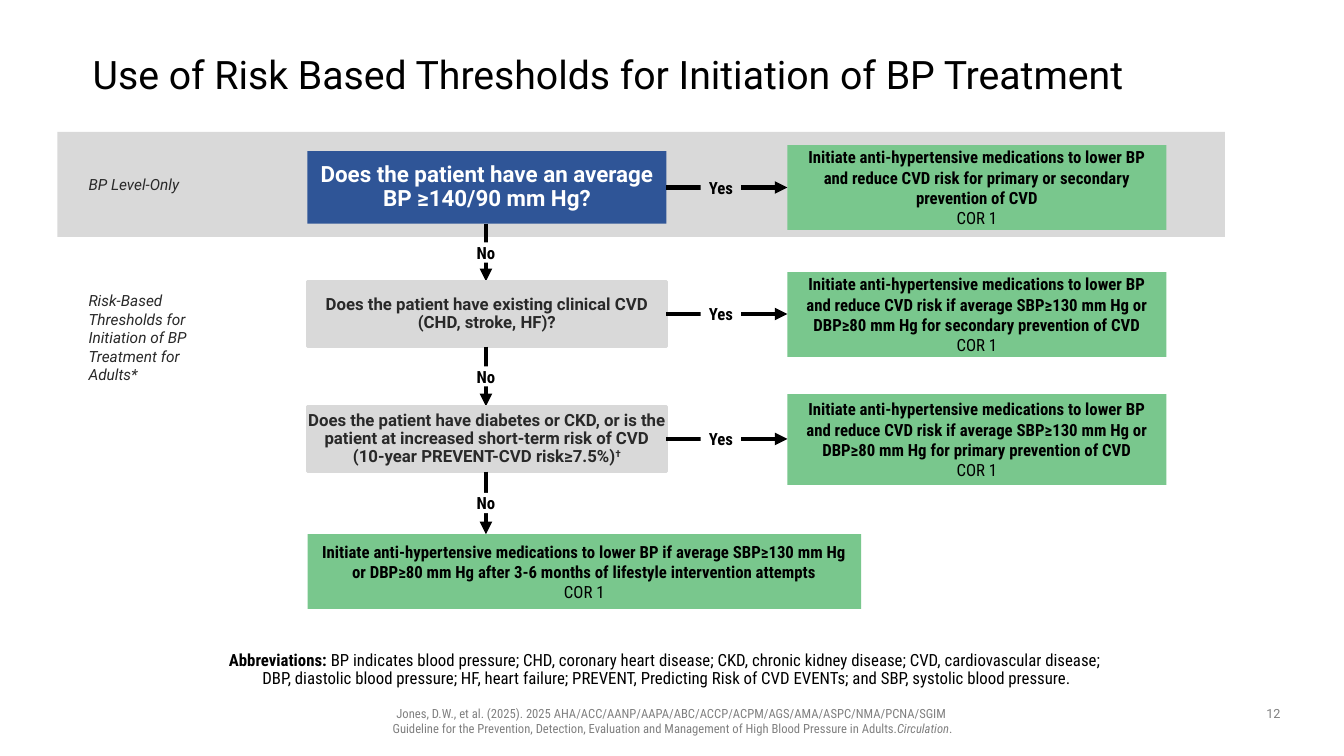
from pptx import Presentation
from pptx.dml.color import RGBColor
from pptx.enum.shapes import MSO_CONNECTOR, MSO_SHAPE
from pptx.enum.text import MSO_ANCHOR, PP_ALIGN
from pptx.oxml.ns import qn
from pptx.util import Inches, Pt
from lxml import etree

RECTANGLE = MSO_SHAPE.RECTANGLE
STRAIGHT = MSO_CONNECTOR.STRAIGHT
LEFT, CENTER = PP_ALIGN.LEFT, PP_ALIGN.CENTER
TOP, MIDDLE, BOTTOM = MSO_ANCHOR.TOP, MSO_ANCHOR.MIDDLE, MSO_ANCHOR.BOTTOM
SANS, CONDENSED = "Roboto", "Roboto Condensed"
BLACK, WHITE, INK, MUTED = "000000", "FFFFFF", "292929", "808080"
BAND, BLUE, GREEN = "D9D9D9", "2F5597", "79C78D"
NO_INSETS, INSETS = (0, 0, 0, 0), (0.1, 0.05, 0.1, 0.05)

QUESTIONS = [
    (0.06, 0.72, [("Does the patient have an average BP ≥140/90 mm Hg?", "bold")]),
    (1.35, 0.65, [("Does the patient have existing clinical CVD (CHD, stroke, HF)?", "bold")]),
    (2.59, 0.65, [("Does the patient have diabetes or CKD, or is the patient at increased "
                   "short-term risk of CVD (10-year PREVENT-CVD risk≥7.5%)", "bold"),
                  ("†", "bold superscript")]),
]
OUTCOMES = [
    (0, 0.84, "Initiate anti-hypertensive medications to lower BP and reduce CVD risk "
              "for primary or secondary prevention of CVD"),
    (1.26, 0.84, "Initiate anti-hypertensive medications to lower BP and reduce CVD risk "
                 "if average SBP≥130 mm Hg or DBP≥80 mm Hg for secondary prevention of CVD"),
    (2.47, 0.9, "Initiate anti-hypertensive medications to lower BP and reduce CVD risk "
                "if average SBP≥130 mm Hg or DBP≥80 mm Hg for primary prevention of CVD"),
]
LAST_OUTCOME = ("Initiate anti-hypertensive medications to lower BP if average SBP≥130 mm Hg "
                "or DBP≥80 mm Hg after 3-6 months of lifestyle intervention attempts")


def color(value):
    """Turn a hex string into a colour."""
    return RGBColor.from_string(value)


def write(shape, paragraphs, font, size, ink, align=CENTER, anchor=MIDDLE,
          insets=INSETS, spacing=1.0):
    """Fill a shape with paragraphs, each a list of (text, style) runs."""
    frame = shape.text_frame
    frame.word_wrap = True
    frame.vertical_anchor = anchor
    frame.margin_left, frame.margin_top, frame.margin_right, frame.margin_bottom = map(Inches, insets)
    for index, parts in enumerate(paragraphs):
        paragraph = frame.add_paragraph() if index else frame.paragraphs[0]
        paragraph.alignment = align
        paragraph.line_spacing = spacing
        for text, style in parts:
            for number, line in enumerate(text.split("\n")):
                if number:
                    paragraph.add_line_break()
                run = paragraph.add_run()
                run.text = line
                run.font.name = font
                run.font.size = Pt(size)
                run.font.color.rgb = color(ink)
                run.font.bold = "bold" in style
                run.font.italic = "italic" in style
                if "superscript" in style:
                    run.font._element.set("baseline", "30000")


def add_box(slide, box, fill, line=None):
    """Add a flat rectangle."""
    shape = slide.shapes.add_shape(RECTANGLE, *map(Inches, box))
    shape.shadow.inherit = False
    shape.fill.solid()
    shape.fill.fore_color.rgb = color(fill)
    if line:
        shape.line.color.rgb = color(line)
        shape.line.width = Pt(2)
    else:
        shape.line.fill.background()
    return shape


def add_text(slide, box, parts, font, size, ink, **layout):
    """Add a text box with one paragraph."""
    write(slide.shapes.add_textbox(*map(Inches, box)), [parts], font, size, ink, **layout)


def add_arrow(slide, start, end):
    """Add a thick black arrow between two points."""
    arrow = slide.shapes.add_connector(STRAIGHT, *map(Inches, start + end))
    arrow.line.color.rgb = color(BLACK)
    arrow.line.width = Pt(3)
    etree.SubElement(arrow.line._get_or_add_ln(), qn("a:tailEnd"), type="triangle")
    etree.SubElement(arrow._element.spPr, qn("a:effectLst"))


def add_answer(slide, left, middle, text, fill):
    """Add an answer label over an arrow."""
    label = add_box(slide, (left, middle - 0.1, 0.4, 0.2), fill)
    write(label, [[(text, "bold")]], CONDENSED, 12, BLACK, anchor=TOP, insets=NO_INSETS)


def add_outcome(slide, box, text):
    """Add a green treatment box."""
    write(add_box(slide, box, GREEN), [[(text, "bold")], [("COR 1", "")]], CONDENSED, 12, BLACK)


def add_flow(slide, box):
    """Draw the questions, their outcomes and the arrows between them."""
    left, top, width, height = box
    question_width, outcome_width, last_height = 3.56, 3.76, 0.74
    outcome_left = left + width - outcome_width
    center = left + question_width / 2 - 0.01
    last_top = height - last_height
    next_tops = [question[0] for question in QUESTIONS[1:]] + [last_top]
    for index, (question, outcome, next_top) in enumerate(zip(QUESTIONS, OUTCOMES, next_tops)):
        offset, question_height, parts = question
        outcome_offset, outcome_height, text = outcome
        first = index == 0
        question_box = (left, top + offset, question_width, question_height)
        shape = add_box(slide, question_box, BLUE if first else BAND, None if first else BAND)
        write(shape, [parts], SANS, 16 if first else 12, WHITE if first else INK,
              insets=NO_INSETS, spacing=0.9)
        add_outcome(slide, (outcome_left, top + outcome_offset, outcome_width, outcome_height), text)
        middle = top + offset + question_height / 2
        bottom = top + offset + question_height
        add_arrow(slide, (left + question_width, middle), (outcome_left, middle))
        add_arrow(slide, (center, bottom), (center, top + next_top))
        add_answer(slide, outcome_left - 0.86, middle, "Yes", BAND if first else WHITE)
        add_answer(slide, center - 0.2, (bottom + top + next_top) / 2, "No", WHITE)
    add_outcome(slide, (left, top + last_top, 5.49, last_height), LAST_OUTCOME)


def add_row_labels(slide, box):
    """Name the two groups of rows at the left."""
    left, top, width, height = box
    labels = [(0, 0.29, "BP Level-Only"),
              (1.15, height - 1.15, "Risk-Based Thresholds for Initiation of BP Treatment for Adults*")]
    for offset, label_height, text in labels:
        add_text(slide, (left, top + offset, width, label_height), [(text, "italic")],
                 SANS, 11, INK, align=LEFT, anchor=TOP)


def add_footer(slide, box):
    """Add the abbreviations, the citation and the slide number."""
    left, top, width, height = box
    add_text(slide, (left, top, 9.57, 0.46), [
        ("Abbreviations: ", "bold"),
        ("BP indicates blood pressure; CHD, coronary heart disease; CKD, chronic kidney disease; "
         "CVD, cardiovascular disease; \nDBP, diastolic blood pressure; HF, heart failure; PREVENT, "
         "Predicting Risk of CVD EVENTs; and SBP, systolic blood pressure.", "")],
        CONDENSED, 12, BLACK, anchor=BOTTOM, insets=(0, 0.05, 0.1, 0.05), spacing=0.9)
    add_text(slide, (left + 0.48, top + height - 0.4, 8.62, 0.4), [
        ("Jones, D.W., et al. (2025). 2025 AHA/ACC/AANP/AAPA/ABC/ACCP/ACPM/AGS/AMA/ASPC/NMA/PCNA/SGIM \n"
         "Guideline for the Prevention, Detection, Evaluation and Management of High Blood Pressure "
         "in Adults.", ""), ("Circulation", "italic"), (".", "")],
        CONDENSED, 9, MUTED, anchor=TOP)
    add_text(slide, (left + width - 0.42, top + height - 0.4, 0.42, 0.26), [("12", "")],
             SANS, 9, MUTED, anchor=TOP)


def main():
    """Build and save the slide."""
    presentation = Presentation()
    presentation.slide_width, presentation.slide_height = Inches(13.33), Inches(7.5)
    slide = presentation.slides.add_slide(presentation.slide_layouts[6])
    add_box(slide, (0.57, 1.31, 11.58, 1.04), BAND)
    add_text(slide, (0.92, 0.4, 12.07, 0.72),
             [("Use of Risk Based Thresholds for Initiation of BP Treatment", "")],
             SANS, 28, BLACK, align=LEFT, insets=NO_INSETS, spacing=0.9)
    add_flow(slide, (3.05, 1.44, 8.52, 4.6))
    add_row_labels(slide, (0.78, 1.69, 1.5, 2.18))
    add_footer(slide, (1.88, 6.42, 10.96, 0.93))
    presentation.save("out.pptx")


if __name__ == "__main__":
    main()
